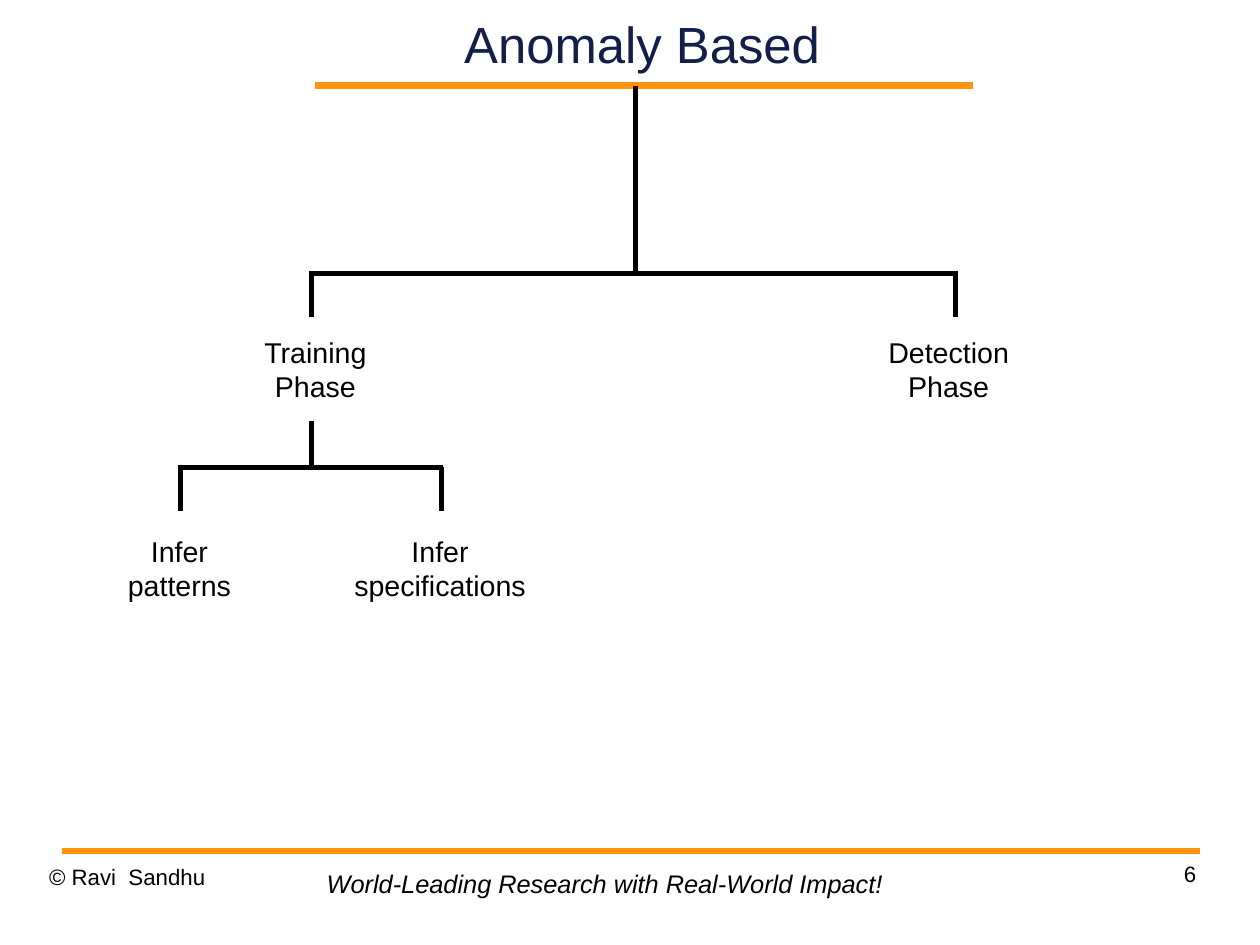
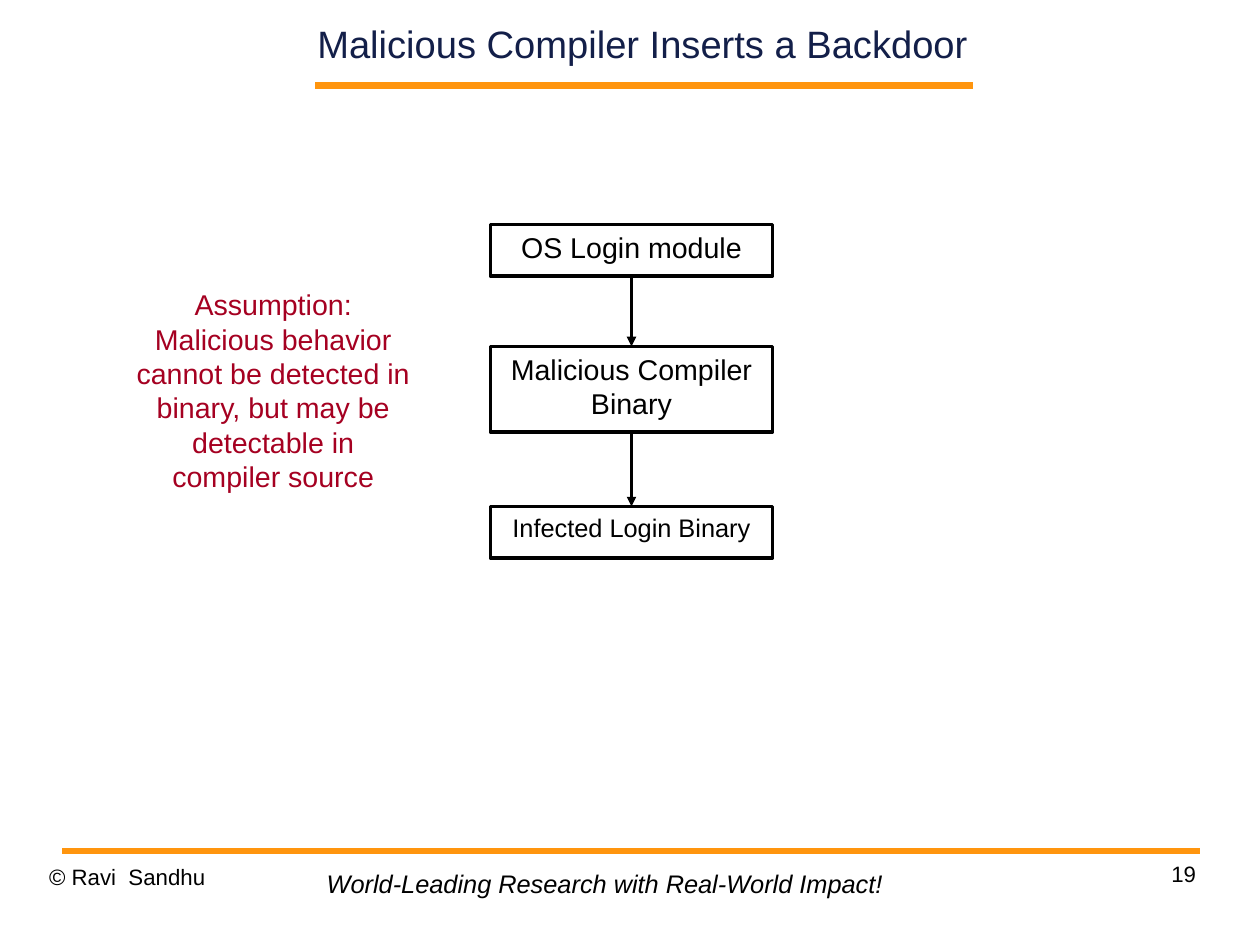
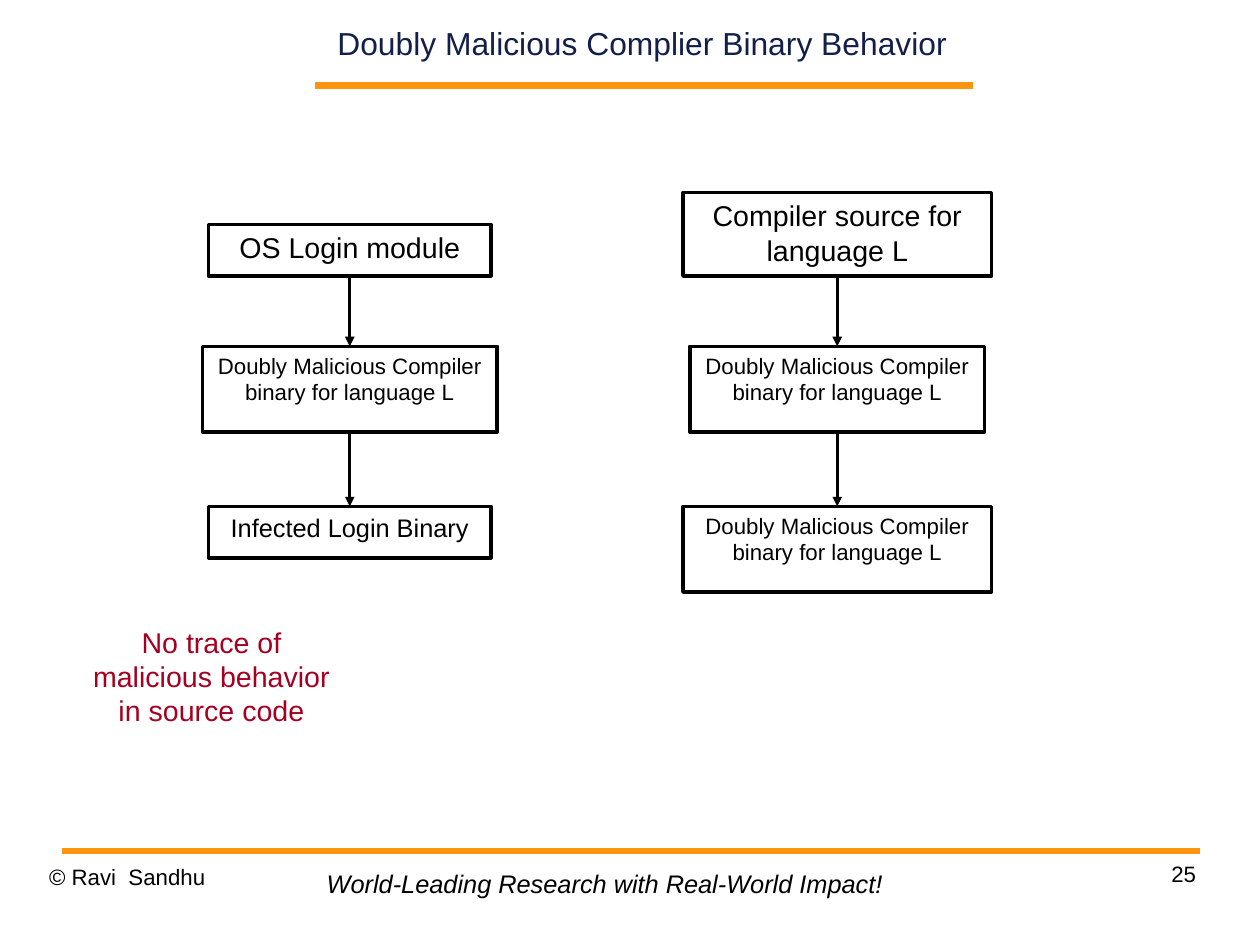
from dataclasses import dataclass
from itertools import pairwise

from lxml.etree import SubElement
from pptx import Presentation
from pptx.dml.color import RGBColor
from pptx.enum.shapes import MSO_CONNECTOR as Connector, MSO_SHAPE as Preset
from pptx.enum.text import MSO_ANCHOR as Anchor, PP_ALIGN as Align
from pptx.oxml.ns import qn
from pptx.shapes.autoshape import Shape
from pptx.shapes.connector import Connector as Line
from pptx.slide import Slide
from pptx.util import Cm, Inches, Length, Pt

SLIDE_WIDTH, SLIDE_HEIGHT = Cm(28), Cm(21)
CELL = 0.1  # inches; columns and rows of the grid are counted in cells


@dataclass(frozen=True)
class Theme:
    font: str = "Arial"
    ink: str = "000000"
    title: str = "131F49"
    rule: str = "FF950E"
    remark: str = "A50021"
    body_size: int = 18
    result_size: int = 16
    small_size: int = 14
    rule_width: float = 4.31
    tree_width: float = 3
    box_width: float = 2.25
    arrow_width: float = 2


THEME = Theme()


@dataclass(frozen=True)
class Area:
    column: float
    row: float
    width: float
    height: float

    def lengths(self) -> tuple[Length, ...]:
        return tuple(map(cells, (self.column, self.row, self.width, self.height)))


@dataclass(frozen=True)
class Label:
    text: str
    center: float
    row: float
    width: float


@dataclass(frozen=True)
class Branch:
    """A stem that splits at a bar into two drops."""
    stem: float
    top: float
    bar: float
    left: float
    right: float


@dataclass(frozen=True)
class Step:
    text: str
    width: float
    height: float
    size: int = THEME.body_size


@dataclass(frozen=True)
class Chain:
    center: float
    steps: tuple[Step, Step, Step]


def cells(count: float) -> Length:
    return Inches(count * CELL)


def write(shape: Shape, text: str, *, size: float = THEME.body_size,
          color: str = THEME.ink, align: Align = Align.CENTER,
          anchor: Anchor = Anchor.TOP, italic: bool = False,
          wrap: bool = True, inset: bool = True) -> None:
    frame = shape.text_frame
    frame.word_wrap = wrap
    frame.vertical_anchor = anchor
    if not inset:
        frame.margin_left = frame.margin_right = 0
        frame.margin_top = frame.margin_bottom = 0
    frame.text = text
    for paragraph in frame.paragraphs:
        paragraph.alignment = align
        font = paragraph.font
        font.name, font.size, font.italic = THEME.font, Pt(size), italic
        font.color.rgb = RGBColor.from_string(color)


def add_text(slide: Slide, area: Area, text: str, **style) -> None:
    write(slide.shapes.add_textbox(*area.lengths()), text, **style)


def add_line(slide: Slide, start: tuple[float, float], end: tuple[float, float],
             width: float, color: str = THEME.ink) -> Line:
    line = slide.shapes.add_connector(Connector.STRAIGHT, *map(cells, start + end))
    line.line.width = Pt(width)
    line.line.color.rgb = RGBColor.from_string(color)
    SubElement(line._element.spPr, qn("a:effectLst"))
    return line


def add_arrow(slide: Slide, upper: Shape, lower: Shape) -> None:
    arrow = add_line(slide, (0, 0), (0, 0), THEME.arrow_width)
    arrow.begin_connect(upper, 2)
    arrow.end_connect(lower, 0)
    SubElement(arrow.line._get_or_add_ln(), qn("a:tailEnd"), type="triangle")


def add_box(slide: Slide, area: Area, step: Step) -> Shape:
    box = slide.shapes.add_shape(Preset.RECTANGLE, *area.lengths())
    box.shadow.inherit = False
    box.fill.background()
    box.line.width = Pt(THEME.box_width)
    box.line.color.rgb = RGBColor.from_string(THEME.ink)
    write(box, step.text, size=step.size)
    return box


def add_chain(slide: Slide, chain: Chain) -> None:
    first, middle, last = chain.steps
    tops = (24.15 - first.height, 30.3, 44.3)  # first boxes share a lower edge
    boxes = [
        add_box(slide, Area(chain.center - step.width / 2, top, step.width, step.height), step)
        for step, top in zip(chain.steps, tops)
    ]
    for upper, lower in pairwise(boxes):
        add_arrow(slide, upper, lower)


def add_branch(slide: Slide, branch: Branch, drop: float = 3.8) -> None:
    overlap = 0.2  # closes the corners
    width = THEME.tree_width
    add_line(slide, (branch.stem, branch.top), (branch.stem, branch.bar), width)
    add_line(slide, (branch.left - overlap, branch.bar), (branch.right + overlap, branch.bar), width)
    for column in (branch.left, branch.right):
        add_line(slide, (column, branch.bar), (column, branch.bar + drop), width)


def add_label(slide: Slide, label: Label) -> None:
    area = Area(label.center - label.width / 2, label.row, label.width, 7)
    add_text(slide, area, label.text, wrap=False)


def add_page(presentation: Presentation, title: str, title_size: int, number: int) -> Slide:
    """A blank slide with the shared rules, footer and title."""
    slide = presentation.slides.add_slide(presentation.slide_layouts[6])
    for left, right, row in ((27.6, 85.1, 7.5), (5.45, 104.95, 74.45)):
        add_line(slide, (left, row), (right, row), THEME.rule_width, THEME.rule)
    add_text(slide, Area(4.3, 75.5, 25.7, 5.7), "© Ravi  Sandhu",
             size=THEME.small_size, align=Align.LEFT, inset=False)
    add_text(slide, Area(78.95, 75.3, 25.7, 5.7), str(number),
             size=THEME.small_size, align=Align.RIGHT, inset=False)
    add_text(slide, Area(27.6, 75.5, 50.8, 3.7),
             "World-Leading Research with Real-World Impact!",
             size=THEME.result_size, align=Align.LEFT, italic=True, wrap=False)
    add_text(slide, Area(24.05, 0, 64.3, 7.5), title, size=title_size,
             color=THEME.title, anchor=Anchor.MIDDLE, inset=False)
    return slide


LOGIN = Step("OS Login module", 24.7, 4.5)
INFECTED = Step("Infected Login Binary", 24.7, 4.5, THEME.result_size)
DOUBLY_TEXT = "Doubly Malicious Compiler binary for language L"
DOUBLY = Step(DOUBLY_TEXT, 25.8, 7.5, THEME.small_size)
DOUBLY_RESULT = Step(DOUBLY_TEXT, 27, 7.5, THEME.small_size)

BRANCHES = (
    Branch(stem=55.6, top=7.5, bar=23.9, left=27.25, right=83.6),
    Branch(stem=27.25, top=36.8, bar=40.9, left=15.8, right=38.6),
)
LABELS = (
    Label("Training\nPhase", 27.6, 28.8, 11),
    Label("Detection\nPhase", 83, 28.8, 12.7),
    Label("Infer\npatterns", 15.7, 46.2, 11.1),
    Label("Infer\nspecifications", 38.5, 46.2, 17.2),
)


def main() -> None:
    presentation = Presentation()
    presentation.slide_width = SLIDE_WIDTH
    presentation.slide_height = SLIDE_HEIGHT

    # Tree of phases
    slide = add_page(presentation, "Anomaly Based", 32, 6)
    for branch in BRANCHES:
        add_branch(slide, branch)
    for label in LABELS:
        add_label(slide, label)

    # Single compiler chain
    slide = add_page(presentation, "Malicious Compiler Inserts a Backdoor", 24, 19)
    compiler = Step("Malicious Compiler\nBinary", 24.7, 7.5)
    add_chain(slide, Chain(55.25, (LOGIN, compiler, INFECTED)))
    add_text(slide, Area(10.95, 24.65, 25.9, 19.2),
             "Assumption: Malicious behavior cannot be detected in binary, "
             "but may be detectable in compiler source", color=THEME.remark)

    # Two compiler chains
    slide = add_page(presentation, "Doubly Malicious Complier Binary Behavior", 20, 25)
    source = Step("Compiler source for language L", 27, 7.3)
    add_chain(slide, Chain(30.6, (LOGIN, DOUBLY, INFECTED)))
    add_chain(slide, Chain(73.25, (source, DOUBLY, DOUBLY_RESULT)))
    add_text(slide, Area(6.35, 54.15, 24.3, 10.1),
             "No trace of malicious behavior in source code", color=THEME.remark)

    presentation.save("out.pptx")


if __name__ == "__main__":
    main()
